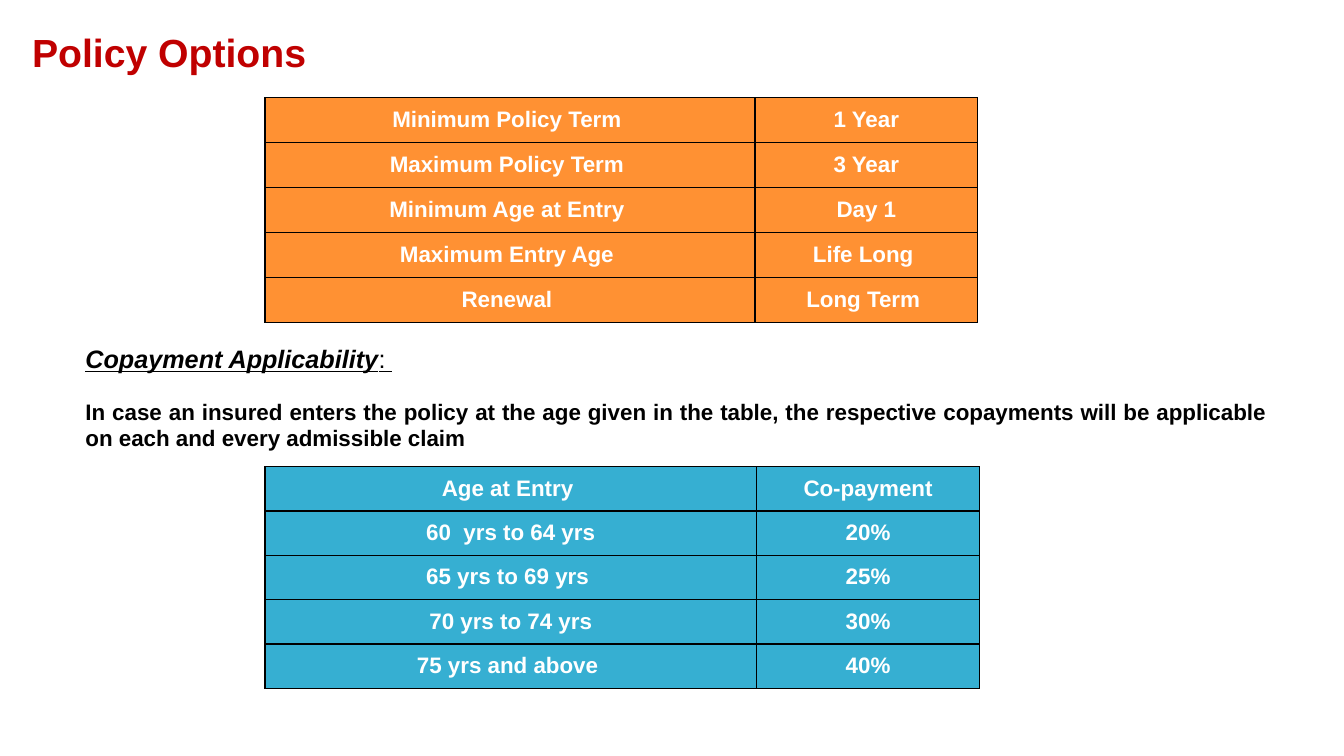
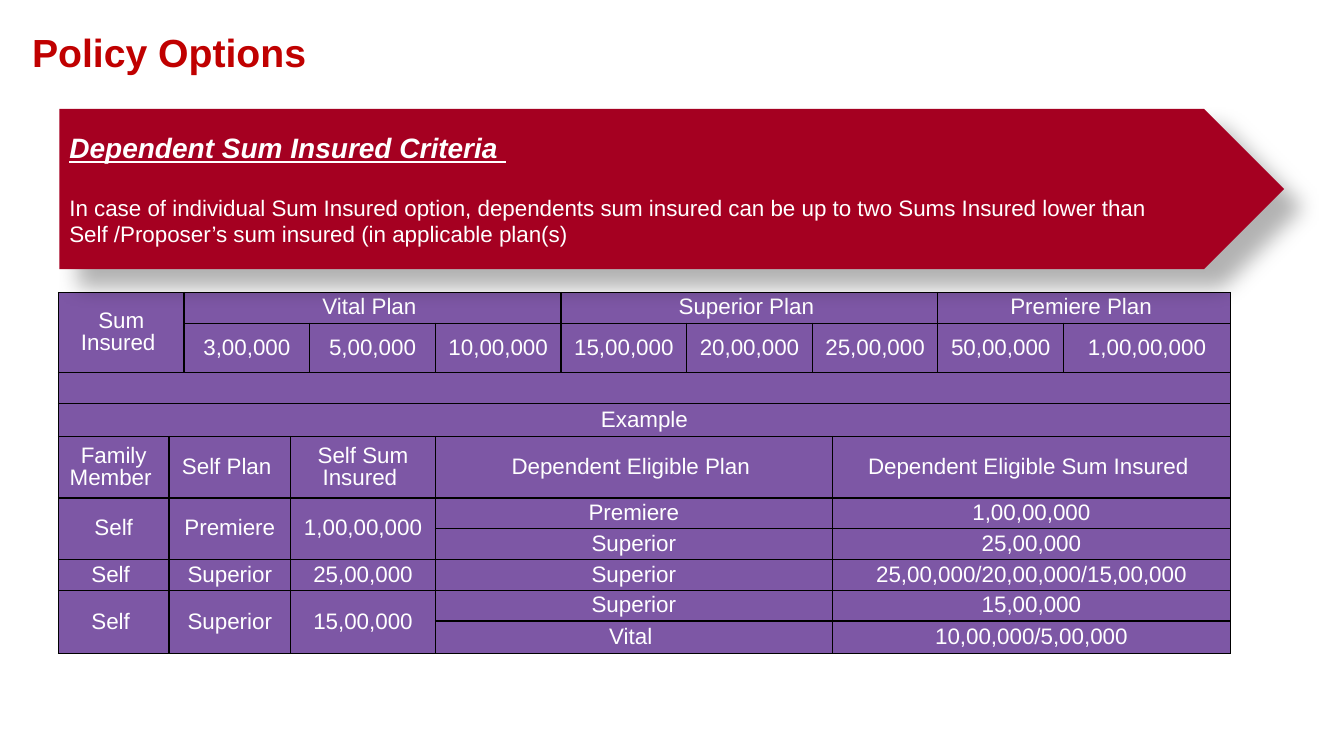
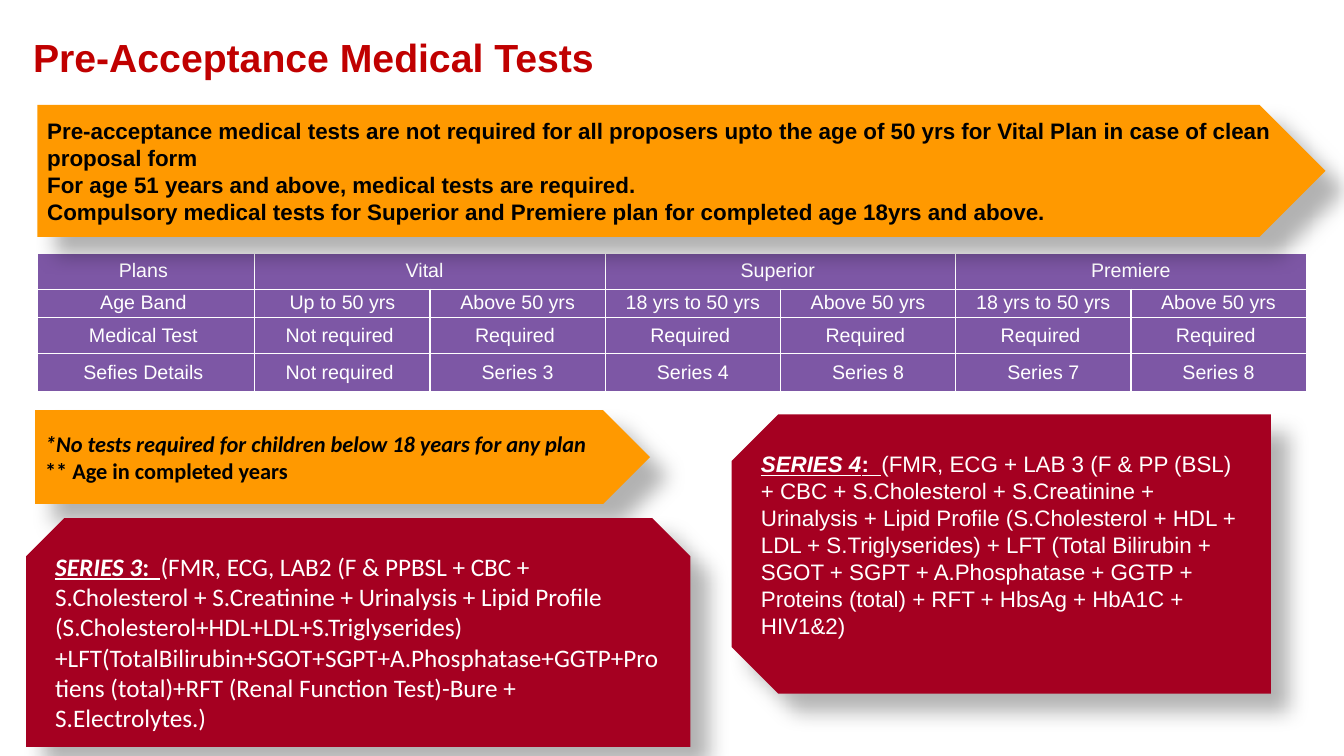
from dataclasses import dataclass, replace
from typing import Optional

from lxml import etree
from pptx import Presentation
from pptx.dml.color import RGBColor
from pptx.enum.shapes import MSO_SHAPE
from pptx.enum.text import MSO_ANCHOR, PP_ALIGN
from pptx.oxml.ns import qn
from pptx.util import Emu, Inches, Pt

MIDDLE, TOP = MSO_ANCHOR.MIDDLE, MSO_ANCHOR.TOP
LEFT, CENTER, JUSTIFY = PP_ALIGN.LEFT, PP_ALIGN.CENTER, PP_ALIGN.JUSTIFY
ARROW_BAND, SNIPPED_CARD = MSO_SHAPE.PENTAGON, MSO_SHAPE.SNIP_2_SAME_RECTANGLE
SLIDE_W, SLIDE_H = Inches(13.333), Inches(7.5)
BLANK_LAYOUT = 6


@dataclass(frozen=True)
class Theme:
    title: str = "C00000"
    white: str = "FFFFFF"
    black: str = "000000"
    orange: str = "FF9133"
    teal: str = "36AFD2"
    purple: str = "7D57A5"
    crimson: str = "A50021"
    amber: str = "FF9900"
    sans: str = "Arial"
    humanist: str = "Calibri"
    title_size: int = 28
    heading_size: int = 20
    subheading_size: int = 18
    body_size: int = 16
    small_size: int = 14


THEME = Theme()


@dataclass(frozen=True)
class Style:
    size: int = THEME.body_size
    color: str = THEME.black
    font: str = THEME.sans
    bold: bool = False
    italic: bool = False
    underline: bool = False


@dataclass(frozen=True)
class Run:
    text: str
    style: Style


@dataclass(frozen=True)
class Para:
    runs: tuple[Run, ...]
    align: PP_ALIGN = LEFT
    space_before: float = 0
    line_spacing: Optional[float] = None


@dataclass(frozen=True)
class Box:
    """Left, top, width and height in percent of the slide."""
    left: float
    top: float
    width: float
    height: float

    def emu(self) -> tuple[Emu, ...]:
        sides = (SLIDE_W, SLIDE_H, SLIDE_W, SLIDE_H)
        shares = (self.left, self.top, self.width, self.height)
        return tuple(Emu(int(side * share / 100)) for side, share in zip(sides, shares))


@dataclass(frozen=True)
class Cell:
    text: str
    cols: int = 1
    rows: int = 1


@dataclass(frozen=True)
class Grid:
    """A table; widths and heights are weights shared out over its box."""
    box: Box
    widths: tuple[float, ...]
    heights: tuple[float, ...]
    rows: tuple[tuple[Cell, ...], ...]
    fill: str
    style: Style
    border: str = THEME.black


@dataclass(frozen=True)
class Panel:
    box: Box
    kind: MSO_SHAPE
    fill: str
    paras: tuple[Para, ...] = ()
    rotation: int = 0


TITLE = Style(THEME.title_size, THEME.title, bold=True)
BODY_BOLD = Style(bold=True)
WHITE_BODY = Style(color=THEME.white)
WHITE_BOLD = replace(WHITE_BODY, bold=True)
WHITE_SMALL = replace(WHITE_BODY, size=THEME.small_size)
TITLE_BOX = Box(1.65, 2.13, 90, 9.47)


def rgb(value: str) -> RGBColor:
    return RGBColor.from_string(value)


def line(text: str, style: Style, **layout) -> Para:
    return Para((Run(text, style),), **layout)


def cells(*texts: str) -> tuple[Cell, ...]:
    return tuple(Cell(text) for text in texts)


def write(frame, paras: tuple[Para, ...], anchor: MSO_ANCHOR) -> None:
    frame.word_wrap = True
    frame.vertical_anchor = anchor
    for index, para in enumerate(paras):
        paragraph = frame.add_paragraph() if index else frame.paragraphs[0]
        paragraph.alignment = para.align
        if para.space_before:
            paragraph.space_before = Pt(para.space_before)
        if para.line_spacing:
            paragraph.line_spacing = para.line_spacing
        for part in para.runs:
            run = paragraph.add_run()
            run.text = part.text
            font, style = run.font, part.style
            font.name, font.size = style.font, Pt(style.size)
            font.bold, font.italic, font.underline = style.bold, style.italic, style.underline
            font.color.rgb = rgb(style.color)


def add_text(slide, box: Box, paras: tuple[Para, ...], anchor: MSO_ANCHOR = TOP) -> None:
    write(slide.shapes.add_textbox(*box.emu()).text_frame, paras, anchor)


def add_shadow(shape) -> None:
    shape.shadow.inherit = False
    effects = shape._element.spPr.find(qn("a:effectLst"))
    shadow = etree.SubElement(effects, qn("a:outerShdw"), blurRad=str(Pt(15)), dist=str(Pt(18)),
                              dir=str(45 * 60000), algn="tl", rotWithShape="0")
    color = etree.SubElement(shadow, qn("a:srgbClr"), val=THEME.black)
    etree.SubElement(color, qn("a:alpha"), val="30000")


def add_panel(slide, panel: Panel) -> None:
    shape = slide.shapes.add_shape(panel.kind, *panel.box.emu())
    shape.rotation = panel.rotation
    shape.fill.solid()
    shape.fill.fore_color.rgb = rgb(panel.fill)
    shape.line.fill.background()
    add_shadow(shape)
    write(shape.text_frame, panel.paras, MIDDLE)


def paint_cell(cell, fill: str, border: str) -> None:
    properties = cell._tc.get_or_add_tcPr()
    for side in ("lnL", "lnR", "lnT", "lnB"):
        edge = etree.SubElement(properties, qn(f"a:{side}"), w=str(Pt(1)))
        solid = etree.SubElement(edge, qn("a:solidFill"))
        etree.SubElement(solid, qn("a:srgbClr"), val=border)
    cell.fill.solid()
    cell.fill.fore_color.rgb = rgb(fill)
    cell.margin_left = cell.margin_right = cell.margin_top = Inches(0.01)
    cell.margin_bottom = 0


def add_grid(slide, grid: Grid) -> None:
    """Draw a table, placing each cell in the next free position of its row."""
    box = grid.box.emu()
    table = slide.shapes.add_table(len(grid.heights), len(grid.widths), *box).table
    table.first_row = table.horz_banding = False
    for column, weight in zip(table.columns, grid.widths):
        column.width = Emu(int(box[2] * weight / sum(grid.widths)))
    for row, weight in zip(table.rows, grid.heights):
        row.height = Emu(int(box[3] * weight / sum(grid.heights)))
    for cell in table.iter_cells():
        paint_cell(cell, grid.fill, grid.border)

    taken = set()
    for r, row_cells in enumerate(grid.rows):
        c = 0
        for entry in row_cells:
            while (r, c) in taken:
                c += 1
            taken |= {(r + i, c + j) for i in range(entry.rows) for j in range(entry.cols)}
            cell = table.cell(r, c)
            if entry.rows * entry.cols > 1:
                cell.merge(table.cell(r + entry.rows - 1, c + entry.cols - 1))
            cell.vertical_anchor = MIDDLE
            if entry.text:
                para = line(entry.text, grid.style, align=CENTER, line_spacing=0.9)
                write(cell.text_frame, (para,), MIDDLE)


def new_slide(deck, title: str, box: Box = TITLE_BOX):
    slide = deck.slides.add_slide(deck.slide_layouts[BLANK_LAYOUT])
    add_text(slide, box, (line(title, TITLE),), MIDDLE)
    return slide


def series(name: str, tests: str, style: Style) -> tuple[Para, ...]:
    label = replace(style, bold=True, underline=True)
    return (Para((Run(name, replace(label, italic=True)), Run(":  ", label), Run(tests, style))),)


def build_terms(deck) -> None:
    slide = new_slide(deck, "Policy Options")
    add_grid(slide, Grid(
        Box(19.72, 12.93, 53.03, 29.73), (11, 5), (1,) * 5,
        (cells("Minimum Policy Term ", "1 Year"),
         cells("Maximum Policy Term ", "3 Year"),
         cells("Minimum Age at Entry ", "Day 1"),
         cells("Maximum Entry Age ", "Life Long "),
         cells("Renewal ", "Long Term ")),
        THEME.orange, WHITE_BOLD))
    heading = Style(THEME.subheading_size, underline=True)
    add_text(slide, Box(5.62, 44.8, 89.4, 15.73), (
        Para((Run("Copayment Applicability", replace(heading, bold=True, italic=True)),
              Run(": ", heading)), JUSTIFY),
        line("In case an insured enters the policy at the age given in the table, the respective "
             "copayments will be applicable on each and every admissible claim",
             BODY_BOLD, align=JUSTIFY, space_before=17)))
    add_grid(slide, Grid(
        Box(19.72, 61.73, 53.18, 29.33), (11, 5), (1,) * 5,
        (cells("Age at Entry ", "Co-payment"),
         cells("60  yrs to 64 yrs", "20%"),
         cells("65 yrs to 69 yrs ", "25%"),
         cells("70 yrs to 74 yrs", "30%"),
         cells("75 yrs and above ", "40%")),
        THEME.teal, WHITE_BOLD))


def build_dependents(deck) -> None:
    slide = new_slide(deck, "Policy Options")

    def member(name: str, plan: str, insured: str, *eligible: tuple[str, str]):
        """Rows of one family member, with one row per eligible plan."""
        span = len(eligible)
        lead = (Cell(name, 1, span), Cell(plan, 2, span), Cell(insured, 2, span))
        return tuple((lead if i == 0 else ()) + (Cell(option, 4), Cell(amount, 3))
                     for i, (option, amount) in enumerate(eligible))

    add_grid(slide, Grid(
        Box(4.35, 38.67, 87.22, 47.6),
        (1.1, 0.15, 1.06, 0.19, 1.25, 1.25, 1.25, 1.25, 0.2, 1.05, 1.25, 1.66),
        (0.32, 0.5, 0.32, 0.34, 0.64, 0.32, 0.32, 0.32, 0.32, 0.34),
        ((Cell("Sum Insured ", 2, 2), Cell("Vital Plan ", 4), Cell("Superior Plan ", 4),
          Cell("Premiere Plan ", 2)),
         (Cell("3,00,000", 2), *cells("5,00,000", "10,00,000", "15,00,000", "20,00,000"),
          Cell("25,00,000", 2), *cells("50,00,000", "1,00,00,000")),
         (Cell("", 12),),
         (Cell("Example", 12),),
         (Cell("Family Member "), Cell("Self Plan ", 2), Cell("Self Sum Insured ", 2),
          Cell("Dependent Eligible Plan ", 4), Cell("Dependent Eligible Sum Insured ", 3)),
         *member("Self", "Premiere", "1,00,00,000",
                 ("Premiere", "1,00,00,000"), ("Superior", "25,00,000")),
         *member("Self ", "Superior", "25,00,000",
                 ("Superior", "25,00,000/20,00,000/15,00,000")),
         *member("Self ", "Superior", "15,00,000",
                 ("Superior", "15,00,000"), ("Vital ", "10,00,000/5,00,000"))),
        THEME.purple, WHITE_BODY))
    heading = replace(WHITE_BOLD, size=THEME.heading_size, italic=True, underline=True)
    add_panel(slide, Panel(Box(4.42, 14.4, 91.12, 21.2), ARROW_BAND, THEME.crimson, (
        line("Dependent Sum Insured Criteria ", heading),
        line("In case of individual Sum Insured option, dependents sum insured can be up to two "
             "Sums Insured lower than", WHITE_BODY, space_before=21),
        line("Self /Proposer’s sum insured (in applicable plan(s)", WHITE_BODY))))


def build_tests(deck) -> None:
    slide = new_slide(deck, "Pre-Acceptance Medical Tests", Box(1.72, 3.6, 90, 7.87))
    add_grid(slide, Grid(
        Box(2.78, 33.47, 94.42, 18.4), (2.16,) + (1.74,) * 6, (0.36, 0.28, 0.36, 0.38),
        ((Cell("Plans "), Cell("Vital  ", 2), Cell("Superior ", 2), Cell("Premiere", 2)),
         cells("Age Band ", "Up to 50 yrs", "Above 50 yrs",
               *("18 yrs to 50 yrs", "Above 50 yrs") * 2),
         cells("Medical Test ", "Not required ", *("Required ",) * 5),
         cells("Sefies Details ", "Not required ", "Series 3", "Series 4", "Series 8",
               "Series 7", "Series 8")),
        THEME.purple, WHITE_SMALL, THEME.white))
    note = replace(BODY_BOLD, font=THEME.humanist)
    series_3 = series(
        "SERIES 3",
        "(FMR, ECG, LAB2 (F & PPBSL + CBC + S.Cholesterol + S.Creatinine + Urinalysis + "
        "Lipid Profile (S.Cholesterol+HDL+LDL+S.Triglyserides)"
        "+LFT(TotalBilirubin+SGOT+SGPT+A.Phosphatase+GGTP+Protiens (total)"
        "+RFT (Renal Function Test)-Bure + S.Electrolytes.)",
        replace(WHITE_BODY, size=THEME.subheading_size, font=THEME.humanist))
    panels = (
        Panel(Box(2.78, 13.87, 95.85, 17.47), ARROW_BAND, THEME.amber, (
            line("Pre-acceptance medical tests are not required for all proposers upto the age "
                 "of 50 yrs for Vital Plan in case of clean proposal form", BODY_BOLD),
            line("For age 51 years and above, medical tests are required.", BODY_BOLD),
            line("Compulsory medical tests for Superior and Premiere plan for completed age "
                 "18yrs and above.", BODY_BOLD))),
        Panel(Box(2.62, 54.27, 45.75, 12.4), ARROW_BAND, THEME.amber, (
            line("*No tests required for children below 18 years for any plan",
                 replace(note, italic=True)),
            line("** Age in completed years", note))),
        Panel(Box(64.12, 37.6, 20.78, 71.33), SNIPPED_CARD, THEME.crimson, rotation=270),
        Panel(Box(1.95, 68.53, 49.42, 30.27), SNIPPED_CARD, THEME.crimson, series_3),
    )
    for panel in panels:
        add_panel(slide, panel)
    add_text(slide, Box(55.88, 58.93, 37.28, 26.53), series(
        "SERIES 4",
        "(FMR, ECG + LAB 3 (F & PP (BSL) + CBC + S.Cholesterol + S.Creatinine + Urinalysis + "
        "Lipid Profile (S.Cholesterol + HDL + LDL + S.Triglyserides) + LFT (Total Bilirubin + "
        "SGOT + SGPT + A.Phosphatase + GGTP + Proteins (total) + RFT + HbsAg + HbA1C + HIV1&2)",
        WHITE_BODY))


def main() -> None:
    deck = Presentation()
    deck.slide_width, deck.slide_height = SLIDE_W, SLIDE_H
    for build in (build_terms, build_dependents, build_tests):
        build(deck)
    deck.save("out.pptx")


if __name__ == "__main__":
    main()
